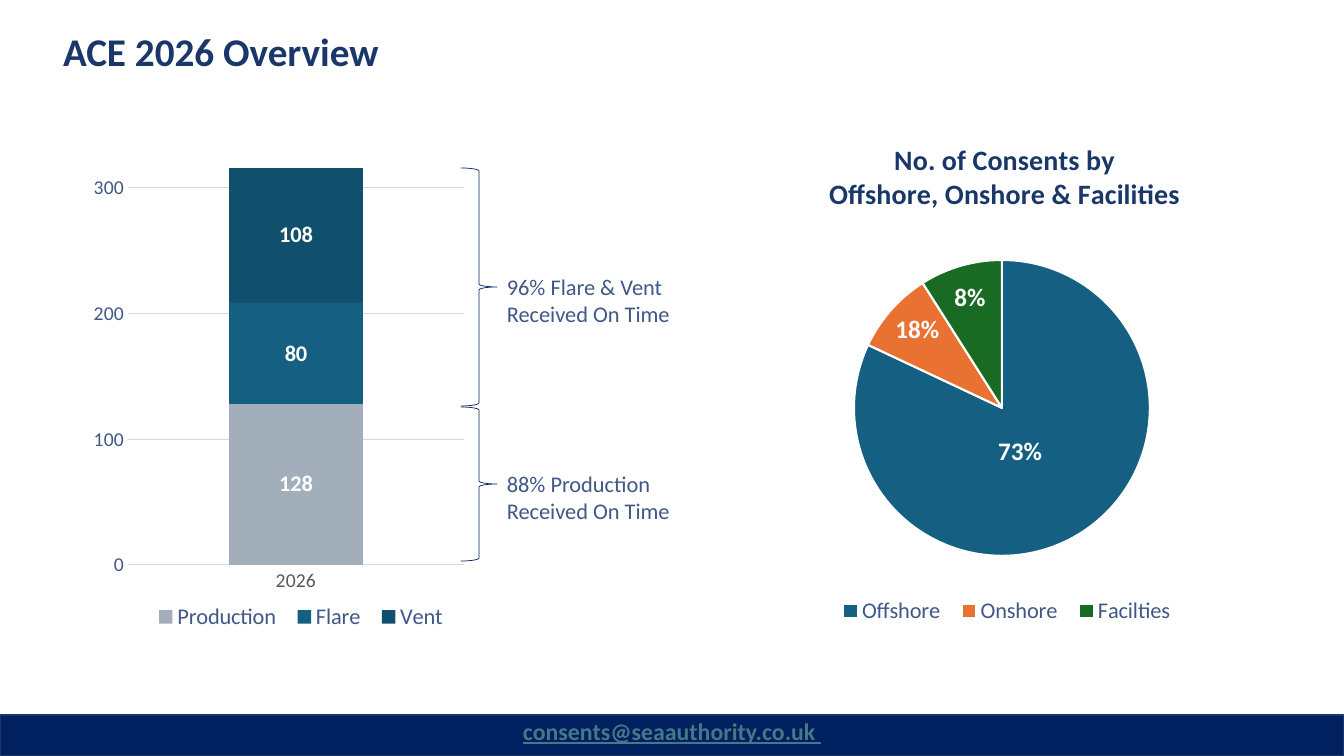
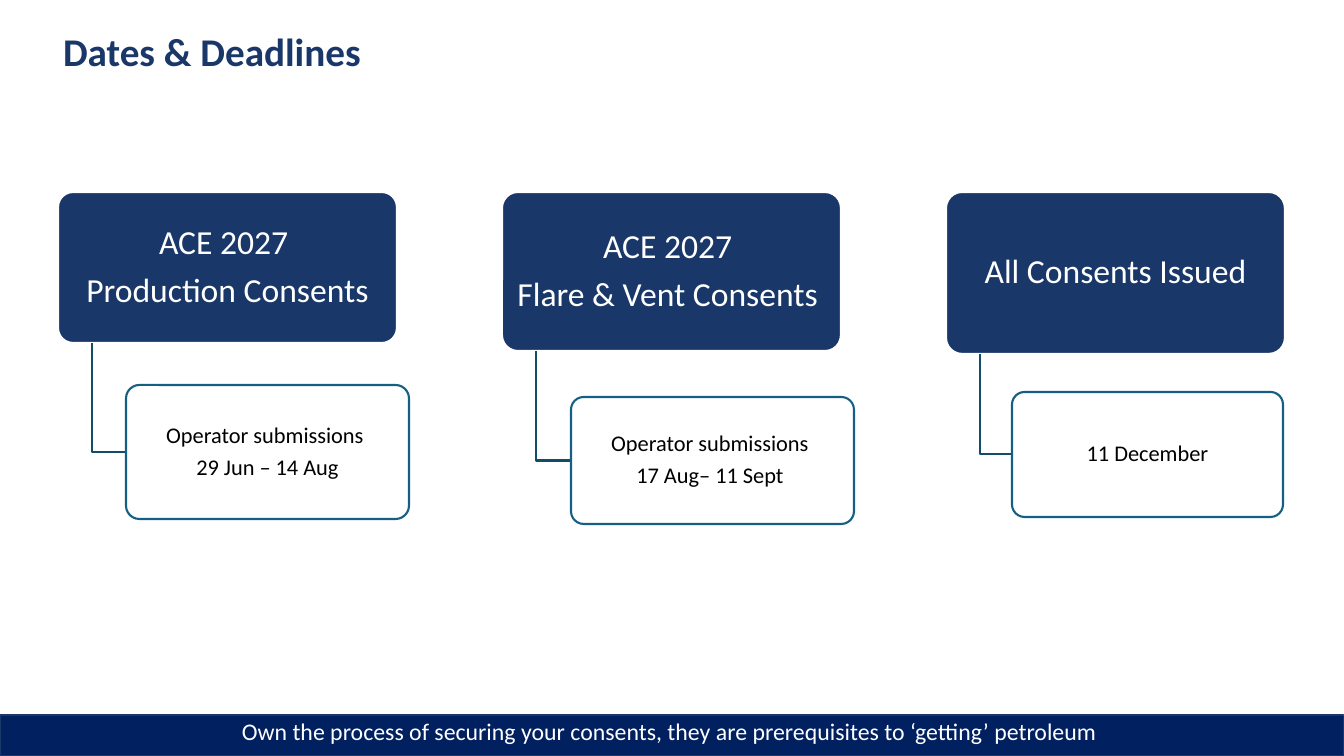
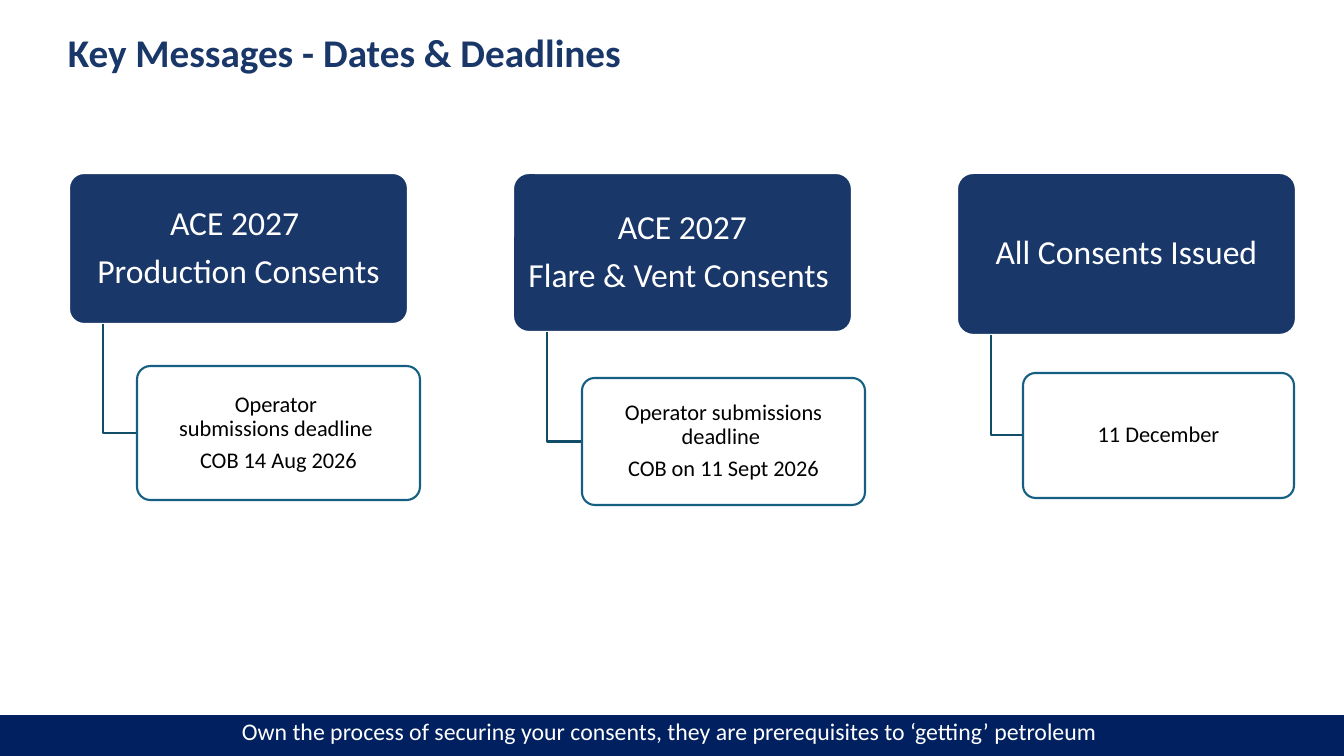
from typing import Any, NamedTuple

from pptx import Presentation
from pptx import util as u
from pptx.chart.data import CategoryChartData
from pptx.dml.color import RGBColor
from pptx.enum import chart as ch
from pptx.enum import shapes, text
from pptx.oxml import parse_xml
from pptx.oxml.ns import nsdecls

EMU_PER_PX = 914400 / 100.8
WIDTH, HEIGHT = 1344, 756

NAVY = RGBColor(0x19, 0x37, 0x68)
BAND = RGBColor(0x00, 0x20, 0x60)
SLATE = RGBColor(0x40, 0x58, 0x88)
TEAL = RGBColor(0x15, 0x60, 0x82)
DEEP_TEAL = RGBColor(0x11, 0x50, 0x6C)
STEM = RGBColor(0x11, 0x4D, 0x68)
SILVER = RGBColor(0xA2, 0xAF, 0xBB)
ORANGE = RGBColor(0xE9, 0x71, 0x32)
GREEN = RGBColor(0x19, 0x6B, 0x24)
LINK = RGBColor(0x46, 0x78, 0x86)
GREY = RGBColor(0x59, 0x59, 0x59)
GRID = RGBColor(0xD9, 0xD9, 0xD9)
WHITE = RGBColor(0xFF, 0xFF, 0xFF)
BLACK = RGBColor(0x00, 0x00, 0x00)

Format = dict[str, Any]
TITLE: Format = {"size": 28, "color": NAVY, "bold": True}
CHART_TITLE: Format = {"size": 20, "color": NAVY, "bold": True}
FOOTER: Format = {"size": 17, "color": WHITE}
FOOTER_LINK: Format = {"size": 17, "color": LINK, "bold": True, "underline": True}
NOTE: Format = {"size": 16, "color": SLATE}
HEAD: Format = {"size": 24, "color": WHITE}
LEAF: Format = {"size": 16, "color": BLACK}
BAR_LABEL: Format = {"size": 16, "color": WHITE, "bold": True}
PIE_LABEL: Format = {"size": 18, "color": WHITE, "bold": True}

OWN_PROCESS = ("Own the process of securing your consents, they are "
               "prerequisites to ‘getting’ petroleum ")


class Box(NamedTuple):
    x: int
    y: int
    w: int
    h: int


class Branch(NamedTuple):
    """A heading box; the leaf box is placed relative to its top left corner."""
    head_height: int
    leaf: Box


class Wording(NamedTuple):
    head: list[str]
    leaf: list[str]


class Slice(NamedTuple):
    """A pie slice; shift moves its label from the default place."""
    name: str
    value: float
    label: str
    color: RGBColor
    shift: tuple[int, int] | None = None


class Layer(NamedTuple):
    name: str
    value: int
    color: RGBColor


BRANCHES = [
    Branch(151, Box(68, 193, 283, 134)),
    Branch(159, Box(69, 205, 283, 127)),
    Branch(162, Box(66, 200, 271, 125)),
]
HEAD_WIDTH, BRANCH_PITCH, STEM_INSET = 339, 444, 34
BAR_FRAME = Box(85, 115, 389, 527)
PIE_FRAME = Box(755, 123, 504, 510)


def px(n: float) -> u.Emu:
    return u.Emu(round(n * EMU_PER_PX))


def emu(box: Box) -> list[u.Emu]:
    return [px(n) for n in box]


def style(font, fmt: Format) -> None:
    for key, value in ({"name": "Calibri"} | fmt).items():
        if key == "color":
            font.color.rgb = value
        else:
            setattr(font, key, u.Pt(value) if key == "size" else value)


def write(tf, lines: list[str], fmt: Format, frame: Format | None = None,
          para: Format | None = None) -> None:
    """Fill a text frame, one paragraph per line."""
    for key, value in (frame or {}).items():
        setattr(tf, key, value)
    for i, line in enumerate(lines):
        p = tf.add_paragraph() if i else tf.paragraphs[0]
        p.text = line
        for key, value in (para or {}).items():
            setattr(p, key, value)
        for r in p.runs:
            style(r.font, fmt)


def margins(x: int, y: int) -> Format:
    return {"margin_left": px(x), "margin_right": px(x),
            "margin_top": px(y), "margin_bottom": px(y)}


def paint(sp, fill: RGBColor | None, line: RGBColor | None, width: float) -> None:
    sp.shadow.inherit = False
    if fill is None:
        sp.fill.background()
    else:
        sp.fill.solid()
        sp.fill.fore_color.rgb = fill
    if line is None:
        sp.line.fill.background()
    else:
        sp.line.color.rgb = line
        sp.line.width = u.Pt(width)


def add_shape(s, kind, box: Box, fill: RGBColor | None,
              line: RGBColor | None, width: float):
    sp = s.shapes.add_shape(kind, *emu(box))
    paint(sp, fill, line, width)
    return sp


def add_slide(prs, title: str, footer: str, footer_fmt: Format = FOOTER,
              title_at: tuple[int, int] = (63, 29), outline: RGBColor | None = NAVY):
    s = prs.slides.add_slide(prs.slide_layouts[6])
    tb = s.shapes.add_textbox(*emu(Box(*title_at, 782, 55)))
    write(tb.text_frame, [title], TITLE,
          margins(0, 0) | {"margin_right": px(10), "margin_bottom": px(5), "word_wrap": True,
                           "vertical_anchor": text.MSO_ANCHOR.MIDDLE},
          {"line_spacing": 0.9})
    band = add_shape(s, shapes.MSO_SHAPE.RECTANGLE, Box(0, 715, WIDTH, 41),
                     BAND, outline, 0.75)
    write(band.text_frame, [footer], footer_fmt,
          {"vertical_anchor": text.MSO_ANCHOR.TOP},
          {"alignment": text.PP_ALIGN.CENTER, "line_spacing": 0.9})
    return s


def insert_layout(parent, index: int, frame: Box, x: int, y: int,
                  w: int = 0, h: int = 0, mode: str = "edge") -> None:
    """Place a chart part by px inside the chart frame; mode factor is a shift."""
    for old in parent.xpath("./c:layout"):
        parent.remove(old)
    values = {"x": x / frame.w, "y": y / frame.h}
    if w:
        values |= {"w": w / frame.w, "h": h / frame.h}
    target = '<c:layoutTarget val="inner"/>' if parent.tag.endswith("plotArea") else ""
    modes = f'<c:xMode val="{mode}"/><c:yMode val="{mode}"/>' if mode == "edge" else ""
    sizes = "".join(f'<c:{key} val="{value:.4f}"/>' for key, value in values.items())
    parent.insert(index, parse_xml(
        f'<c:layout {nsdecls("c")}><c:manualLayout>{target}{modes}{sizes}'
        '</c:manualLayout></c:layout>'))


def add_chart(s, kind, frame: Box, data: CategoryChartData, plot: Box, legend: Box):
    """Add a chart; plot and legend are placed inside its frame."""
    chart = s.shapes.add_chart(kind, *emu(frame), data).chart
    style(chart.font, {"size": 10, "color": BLACK})
    chart.has_title = False
    chart.has_legend = True
    chart.legend.position = ch.XL_LEGEND_POSITION.BOTTOM
    chart.legend.include_in_layout = False
    style(chart.legend.font, NOTE)
    insert_layout(chart.element.xpath(".//c:plotArea")[0], 0, frame, *plot)
    insert_layout(chart.element.xpath(".//c:legend")[0], 1, frame, *legend)
    return chart


def label_values(series, fmt: Format, position, captions: list[str]) -> None:
    labels = series.data_labels
    labels.show_value = True
    labels.position = position
    style(labels.font, fmt)
    for i, caption in enumerate(captions):
        label = series.points[i].data_label
        write(label.text_frame, [caption], fmt)
        label.position = position


def add_consents_chart(s, layers: list[Layer]) -> None:
    data = CategoryChartData()
    data.categories = ["2026"]
    for layer in layers:
        data.add_series(layer.name, [layer.value])
    chart = add_chart(s, ch.XL_CHART_TYPE.COLUMN_STACKED, BAR_FRAME, data,
                      Box(43, 10, 336, 440), Box(60, 484, 312, 36))
    plot = chart.plots[0]
    plot.gap_width, plot.overlap, plot.vary_by_categories = 150, 100, False
    for series, layer in zip(plot.series, layers):
        series.format.fill.solid()
        series.format.fill.fore_color.rgb = layer.color
        label_values(series, BAR_LABEL, ch.XL_LABEL_POSITION.CENTER, [str(layer.value)])
    years, counts = chart.category_axis, chart.value_axis
    for axis, color in ((years, GREY), (counts, SLATE)):
        axis.major_tick_mark = axis.minor_tick_mark = ch.XL_TICK_MARK.NONE
        style(axis.tick_labels.font, {"size": 14, "color": color})
    counts.minimum_scale, counts.maximum_scale, counts.major_unit = 0, 350, 100
    counts.format.line.fill.background()
    for line in (years.format.line, counts.major_gridlines.format.line):
        line.color.rgb = GRID
        line.width = u.Pt(0.75)


def add_location_chart(s, slices: list[Slice]) -> None:
    data = CategoryChartData(number_format="0%")
    data.categories = [item.name for item in slices]
    data.add_series("Series 1", [item.value for item in slices])
    chart = add_chart(s, ch.XL_CHART_TYPE.PIE, PIE_FRAME, data,
                      Box(99, 137, 296, 296), Box(74, 470, 356, 36))
    chart.has_title = True
    write(chart.chart_title.text_frame,
          ["No. of Consents by ", "Offshore, Onshore & Facilities "], CHART_TITLE)
    insert_layout(chart.element.xpath(".//c:title")[0], 1, PIE_FRAME, 71, 15)
    plot = chart.plots[0]
    plot.vary_by_categories = True
    series = plot.series[0]
    label_values(series, PIE_LABEL, ch.XL_LABEL_POSITION.INSIDE_END,
                 [item.label for item in slices])
    series.data_labels.number_format = "0%"
    series.data_labels.number_format_is_linked = False
    for i, item in enumerate(slices):
        point = series.points[i]
        point.format.fill.solid()
        point.format.fill.fore_color.rgb = item.color
        point.format.line.color.rgb = WHITE
        point.format.line.width = u.Pt(1.5)
        if item.shift:
            insert_layout(chart.element.xpath(".//c:dLbl")[i], 1, PIE_FRAME,
                          *item.shift, mode="factor")


def add_brace_note(s, top: int, height: int, lines: list[str]) -> None:
    """Draw a brace with its note beside the middle."""
    brace = Box(461, top, 36, height)
    add_shape(s, shapes.MSO_SHAPE.RIGHT_BRACE, brace, None, BAND, 0.5)
    note = Box(brace.x + brace.w, top + height // 2 - 19, 185, 64)
    tb = s.shapes.add_textbox(*emu(note))
    write(tb.text_frame, lines, NOTE, {"word_wrap": False})


def add_card(s, box: Box, lines: list[str], fmt: Format, fill: RGBColor,
             line: RGBColor, margin: tuple[int, int]) -> None:
    sp = add_shape(s, shapes.MSO_SHAPE.ROUNDED_RECTANGLE, box, fill, line, 1.5)
    sp.adjustments[0] = 0.1
    write(sp.text_frame, lines, fmt,
          margins(*margin) | {"word_wrap": True,
                              "vertical_anchor": text.MSO_ANCHOR.MIDDLE},
          {"alignment": text.PP_ALIGN.CENTER, "line_spacing": 0.9,
           "space_after": u.Pt(0.35 * fmt["size"])})


def add_timeline(s, left: int, top: int, wordings: list[Wording]) -> None:
    for i, (branch, words) in enumerate(zip(BRANCHES, wordings)):
        x = left + i * BRANCH_PITCH
        head = Box(x, top, HEAD_WIDTH, branch.head_height)
        leaf = branch.leaf._replace(x=x + branch.leaf.x, y=top + branch.leaf.y)
        add_card(s, head, words.head, HEAD, NAVY, WHITE, (5, 3))
        stem_x, mid = px(x + STEM_INSET), px(leaf.y + leaf.h / 2)
        stem = s.shapes.build_freeform(stem_x, px(head.y + head.h))
        stem.add_line_segments([(stem_x, mid), (px(leaf.x), mid)], close=False)
        paint(stem.convert_to_shape(), None, STEM, 1.5)
        add_card(s, leaf, words.leaf, LEAF, WHITE, TEAL, (3, 2))


def overview_slide(prs) -> None:
    s = add_slide(prs, "ACE 2026 Overview", "consents@seaauthority.co.uk ", FOOTER_LINK)
    add_consents_chart(s, [
        Layer("Production", 128, SILVER),
        Layer("Flare", 80, TEAL),
        Layer("Vent", 108, DEEP_TEAL),
    ])
    add_brace_note(s, 168, 238, ["96% Flare & Vent", "Received On Time"])
    add_brace_note(s, 407, 154, ["88% Production", "Received On Time"])
    add_location_chart(s, [
        Slice("Offshore", 0.82, "73%", TEAL, (-36, -61)),
        Slice("Onshore", 0.09, "18%", ORANGE),
        Slice("Facilties", 0.09, "8%", GREEN, (-8, 11)),
    ])


def dates_slide(prs) -> None:
    s = add_slide(prs, "Dates & Deadlines", OWN_PROCESS)
    add_timeline(s, 58, 192, [
        Wording(["ACE 2027 ", "Production Consents"],
                ["Operator submissions ", "29 Jun – 14 Aug"]),
        Wording(["ACE 2027 ", "Flare & Vent Consents "],
                ["Operator submissions ", "17 Aug– 11 Sept "]),
        Wording(["All Consents Issued"], ["11 December"]),
    ])


def key_messages_slide(prs) -> None:
    s = add_slide(prs, "Key Messages - Dates & Deadlines", OWN_PROCESS,
                  title_at=(68, 30), outline=None)
    add_timeline(s, 69, 173, [
        Wording(["ACE 2027 ", "Production Consents"],
                ["Operator \vsubmissions deadline ", "COB 14 Aug 2026"]),
        Wording(["ACE 2027", "Flare & Vent Consents "],
                ["Operator submissions deadline ", "COB on 11 Sept 2026"]),
        Wording(["All Consents Issued"], ["11 December"]),
    ])


def main() -> None:
    prs = Presentation()
    prs.slide_width, prs.slide_height = px(WIDTH), px(HEIGHT)
    for build in (overview_slide, dates_slide, key_messages_slide):
        build(prs)
    prs.save("out.pptx")


if __name__ == "__main__":
    main()
